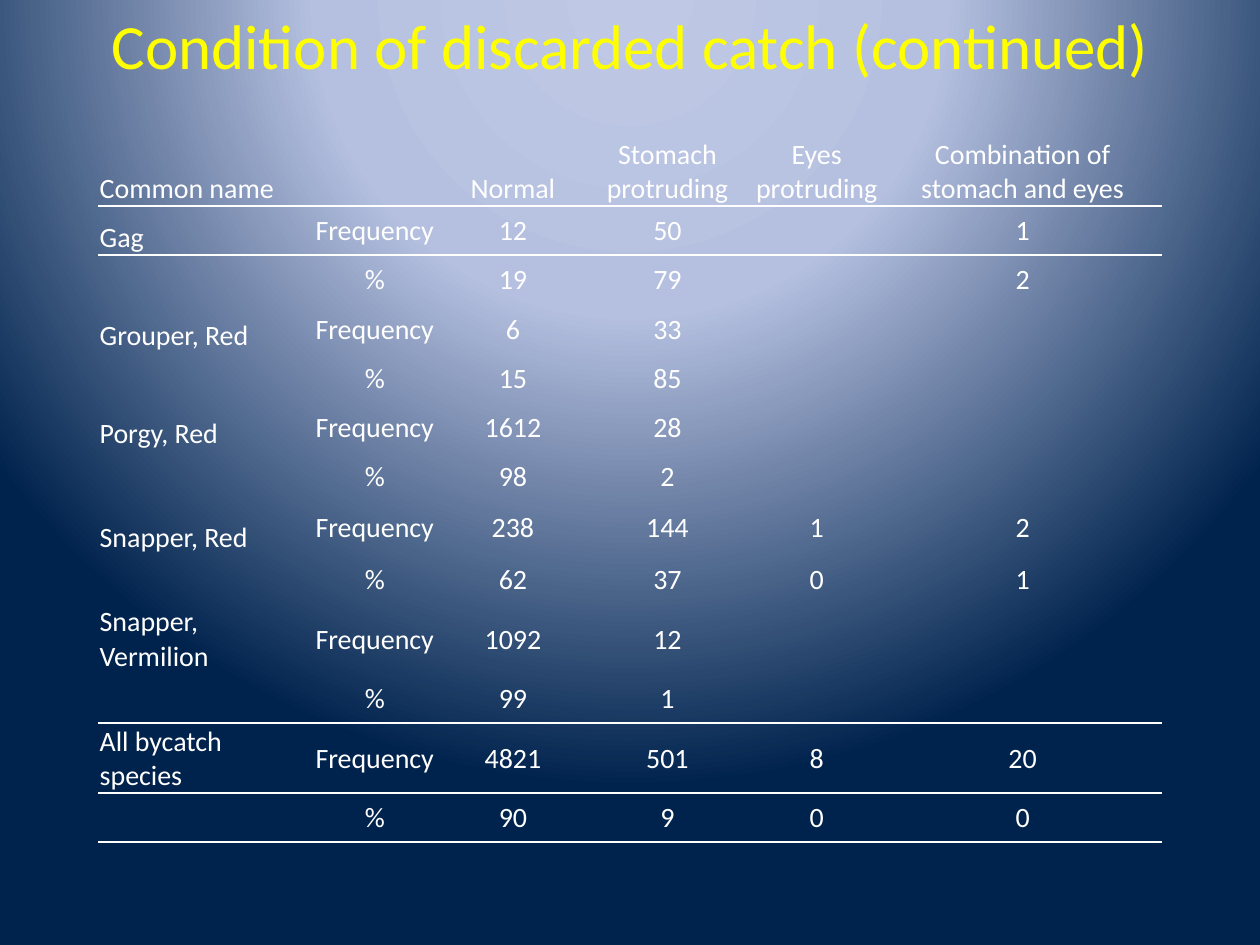
import pptx
import pptx.dml.color
import pptx.enum.text
import pptx.oxml
import pptx.oxml.ns
import pptx.util

Cm = pptx.util.Cm
Pt = pptx.util.Pt
ALIGN = pptx.enum.text.PP_ALIGN
ANCHOR = pptx.enum.text.MSO_ANCHOR
WHITE = pptx.dml.color.RGBColor(0xFF, 0xFF, 0xFF)
YELLOW = pptx.dml.color.RGBColor(0xFF, 0xFF, 0x00)
NAMESPACE = pptx.oxml.ns.nsdecls("a")

TITLE = "Condition of discarded catch (continued)"
HEADERS = ["Common name", "", "Normal", "Stomach protruding", "Eyes protruding",
           "Combination of stomach and eyes"]
CATCH = [
    ("Gag", ["12", "50", "", "1"], ["19", "79", "", "2"]),
    ("Grouper, Red", ["6", "33", "", ""], ["15", "85", "", ""]),
    ("Porgy, Red", ["1612", "28", "", ""], ["98", "2", "", ""]),
    ("Snapper, Red", ["238", "144", "1", "2"], ["62", "37", "0", "1"]),
    ("Snapper, Vermilion", ["1092", "12", "", ""], ["99", "1", "", ""]),
    ("All bycatch species", ["4821", "501", "8", "20"], ["90", "9", "0", "0"]),
]
GRADIENT = [(0, "BFC9E5"), (40, "B5C0E0"), (100, "00234D")]
COLUMN_WIDTHS = [4.24, 2.67, 2.9, 3.33, 2.69, 5.61]
ROW_HEIGHT, TALL_ROW_HEIGHT = 0.99, 1.09
TALL_ROWS = {0, 7}
RULES_BELOW = {0, 10, 12}
NO_STYLE = "{2D5ABB26-0587-4C30-8999-92F81FD0307C}"

TITLE_BOX = {"left": Cm(1.27), "top": Cm(0), "width": Cm(22.86), "height": Cm(3.18)}
TITLE_FONT = {"name": "Calibri", "size": Pt(36)}
CELL_FONT = {"name": "Calibri", "size": Pt(16)}
CELL_FORMAT = {"margin_left": Cm(0.03), "margin_right": Cm(0.03),
               "margin_top": Cm(0.03), "margin_bottom": Cm(0)}
TABLE_FORMAT = {"first_row": False, "horz_banding": False}


def set_attributes(target, values):
    for name, value in values.items():
        setattr(target, name, value)


def set_font(font, values, color):
    set_attributes(font, values)
    font.color.rgb = color


def paint_background(slide):
    slide.background.fill.gradient()
    old_fill = next(slide.element.iter(pptx.oxml.ns.qn("a:gradFill")))
    stops = "".join(
        f'<a:gs pos="{position * 1000}"><a:srgbClr val="{color}"/></a:gs>'
        for position, color in GRADIENT)
    old_fill.getparent().replace(old_fill, pptx.oxml.parse_xml(
        f'<a:gradFill {NAMESPACE} rotWithShape="1"><a:gsLst>{stops}</a:gsLst>'
        '<a:path path="circle"><a:fillToRect l="50000" t="-80000" r="50000" b="180000"/>'
        '</a:path></a:gradFill>'))


def add_rule(cell, side):
    cell._tc.get_or_add_tcPr().insert(0, pptx.oxml.parse_xml(
        f'<a:{side} {NAMESPACE} w="12700"><a:solidFill><a:srgbClr val="{WHITE}"/>'
        f'</a:solidFill></a:{side}>'))


def fill_cell(cell, text, row, column):
    set_attributes(cell, CELL_FORMAT)
    is_bottom = row == 0 or (column == 0 and row < len(CATCH) * 2 - 1)
    cell.vertical_anchor = ANCHOR.BOTTOM if is_bottom else ANCHOR.MIDDLE
    cell.fill.background()
    if text:
        paragraph = cell.text_frame.paragraphs[0]
        paragraph.alignment = ALIGN.CENTER if column else ALIGN.LEFT
        run = paragraph.add_run()
        run.text = text
        set_font(run.font, CELL_FONT, WHITE)
    if row in RULES_BELOW:
        add_rule(cell, "lnB")
    if row - 1 in RULES_BELOW:
        add_rule(cell, "lnT")


def add_catch_table(slide):
    rows = [HEADERS]
    for name, frequencies, percentages in CATCH:
        rows += [[name, "Frequency", *frequencies], ["", "%", *percentages]]
    heights = [TALL_ROW_HEIGHT if row in TALL_ROWS else ROW_HEIGHT
               for row in range(len(rows))]
    table_shape = slide.shapes.add_table(
        len(rows), len(HEADERS), Cm(1.98), Cm(2.74),
        Cm(sum(COLUMN_WIDTHS)), Cm(sum(heights)))
    table = table_shape.table
    set_attributes(table, TABLE_FORMAT)
    next(table_shape.element.iter(pptx.oxml.ns.qn("a:tableStyleId"))).text = NO_STYLE
    for column, width in zip(table.columns, COLUMN_WIDTHS):
        column.width = Cm(width)
    for row, (texts, height) in enumerate(zip(rows, heights)):
        table.rows[row].height = Cm(height)
        for column, text in enumerate(texts):
            fill_cell(table.cell(row, column), text, row, column)


def add_title(slide):
    title = slide.shapes.title
    set_attributes(title, TITLE_BOX)
    title.text_frame.text = TITLE
    title.text_frame.vertical_anchor = ANCHOR.TOP
    paragraph = title.text_frame.paragraphs[0]
    paragraph.alignment = ALIGN.CENTER
    set_font(paragraph.runs[0].font, TITLE_FONT, YELLOW)


def main():
    presentation = pptx.Presentation()
    set_attributes(presentation, {"slide_width": Cm(25.4), "slide_height": Cm(19.05)})
    slide = presentation.slides.add_slide(presentation.slide_layouts[5])
    paint_background(slide)
    add_catch_table(slide)
    add_title(slide)
    presentation.save("out.pptx")


if __name__ == "__main__":
    main()
